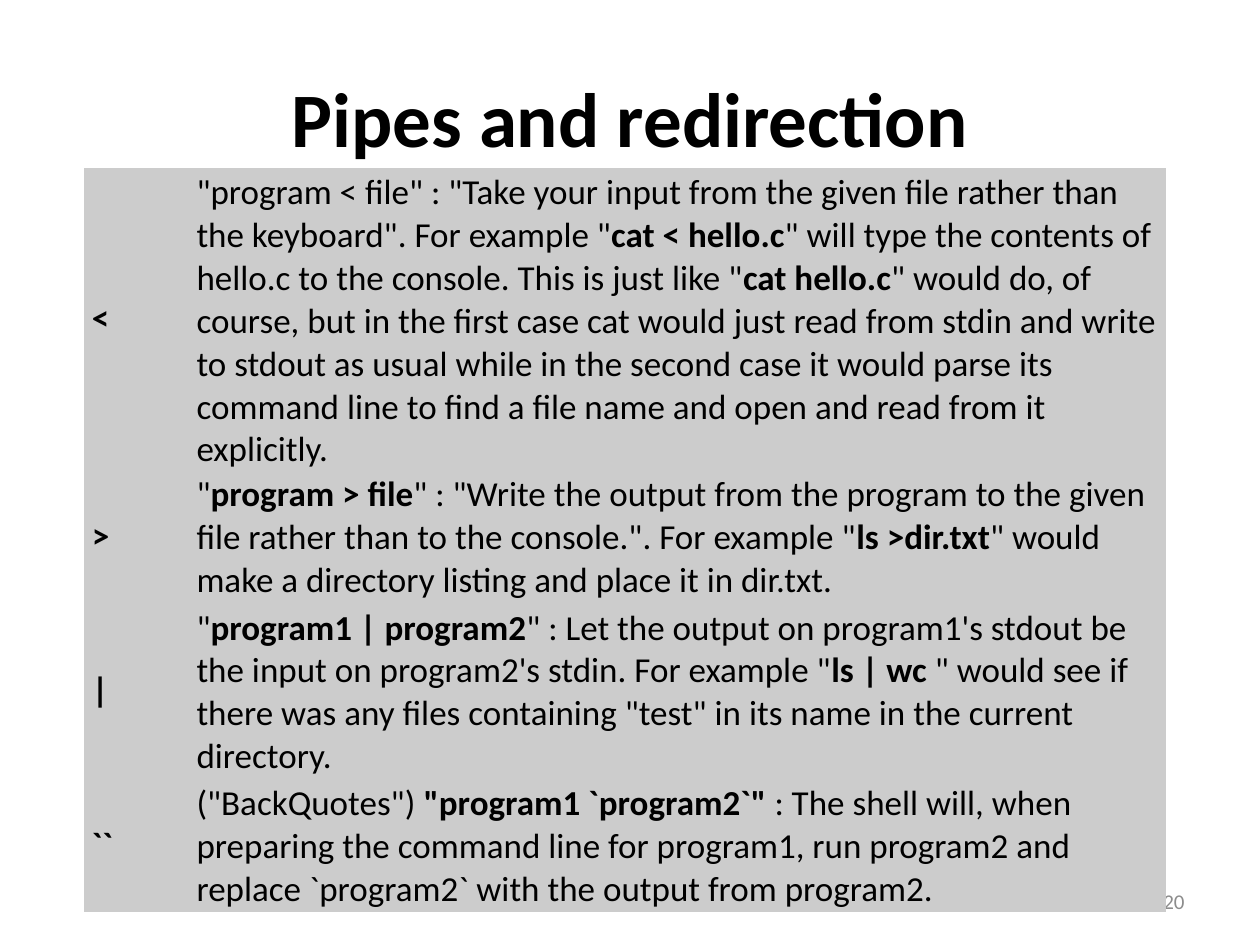
"""Builds the slide on shell pipes and redirection."""
from pptx import Presentation, util as u
from pptx.dml.color import RGBColor
from pptx.enum import text

HUES = {"ink": "000000", "cell": "CCCCCC", "page": "8C8C8C"}
FONT = "Calibri"
ROWS = [
    ("*<*", 1.87,
     '"program < file" : "Take your input from the given file rather than the keyboard". '
     'For example "*cat < hello.c*" will type the contents of hello.c to the console. '
     'This is just like "*cat hello.c*" would do, of course, but in the first case cat '
     'would just read from stdin and write to stdout as usual while in the second case '
     'it would parse its command line to find a file name and open and read from it '
     'explicitly.'),
    ("*>*", 0.97,
     '"*program > file*" : "Write the output from the program to the given file rather '
     'than to the console.". For example "*ls >dir.txt*" would make a directory listing '
     'and place it in dir.txt.'),
    ("*|*", 1.15,
     '"*program1 | program2*" : Let the output on program1\'s stdout be the input on '
     'program2\'s stdin. For example "*ls | wc *" would see if there was any files '
     'containing "test" in its name in the current directory.'),
    ("*``*", 0.97,
     '("BackQuotes") *"program1 `program2`" *: The shell will, when preparing the '
     'command line for program1, run program2 and replace `program2` with the output '
     'from program2.'),
]


def place(shape, *box):
    """Set left, top, width and height in inches."""
    shape.left, shape.top, shape.width, shape.height = map(u.Inches, box)


def write(para, words, size, hue):
    """Fill a paragraph, with bold between asterisks."""
    for i, part in enumerate(words.split("*")):
        if part:
            run = para.add_run()
            run.text = part
            run.font.name, run.font.size = FONT, u.Pt(size)
            run.font.bold = i % 2 == 1
            run.font.color.rgb = RGBColor.from_string(HUES[hue])


deck = Presentation()
deck.slide_width, deck.slide_height = u.Inches(10), u.Inches(7.5)
slide = deck.slides.add_slide(deck.slide_layouts[5])

title = slide.shapes.title
place(title, 0.5, 0.3, 9, 1.25)
title.text_frame.vertical_anchor = text.MSO_ANCHOR.MIDDLE
head = title.text_frame.paragraphs[0]
head.alignment = text.PP_ALIGN.CENTER
write(head, "*Pipes and redirection*", 44, "ink")

page = slide.shapes.add_textbox(0, 0, 0, 0)
place(page, 7.17, 6.95, 2.33, 0.4)
page.text_frame.word_wrap = True
page.text_frame.vertical_anchor = text.MSO_ANCHOR.MIDDLE
foot = page.text_frame.paragraphs[0]
foot.alignment = text.PP_ALIGN.RIGHT
write(foot, "20", 12, "page")

frame = slide.shapes.add_table(len(ROWS), 2, 0, 0, u.Inches(8.58), u.Inches(5.91))
grid = frame.table
grid.first_row = grid.horz_banding = False
for col, wide in zip(grid.columns, (0.83, 7.75)):
    col.width = u.Inches(wide)
for r, (sign, tall, note) in enumerate(ROWS):
    grid.rows[r].height = u.Inches(tall)
    for c, words in enumerate((sign, note)):
        cell = grid.cell(r, c)
        cell.fill.solid()
        cell.fill.fore_color.rgb = RGBColor.from_string(HUES["cell"])
        cell.vertical_anchor = text.MSO_ANCHOR.MIDDLE
        cell.margin_left = cell.margin_right = u.Inches(0.06)
        cell.margin_top = cell.margin_bottom = u.Inches(0.03)
        write(cell.text_frame.paragraphs[0], words, 20, "ink")
# Removing the banded style keeps the cells free of white rules.
style = grid._tbl.tblPr.find("{http://schemas.openxmlformats.org/drawingml/2006/main}tableStyleId")
style.text = "{2D5ABB26-0587-4C30-8999-92F81FD0307C}"
place(frame, 0.67, 1.33, 8.58, 5.91)

deck.save("out.pptx")
